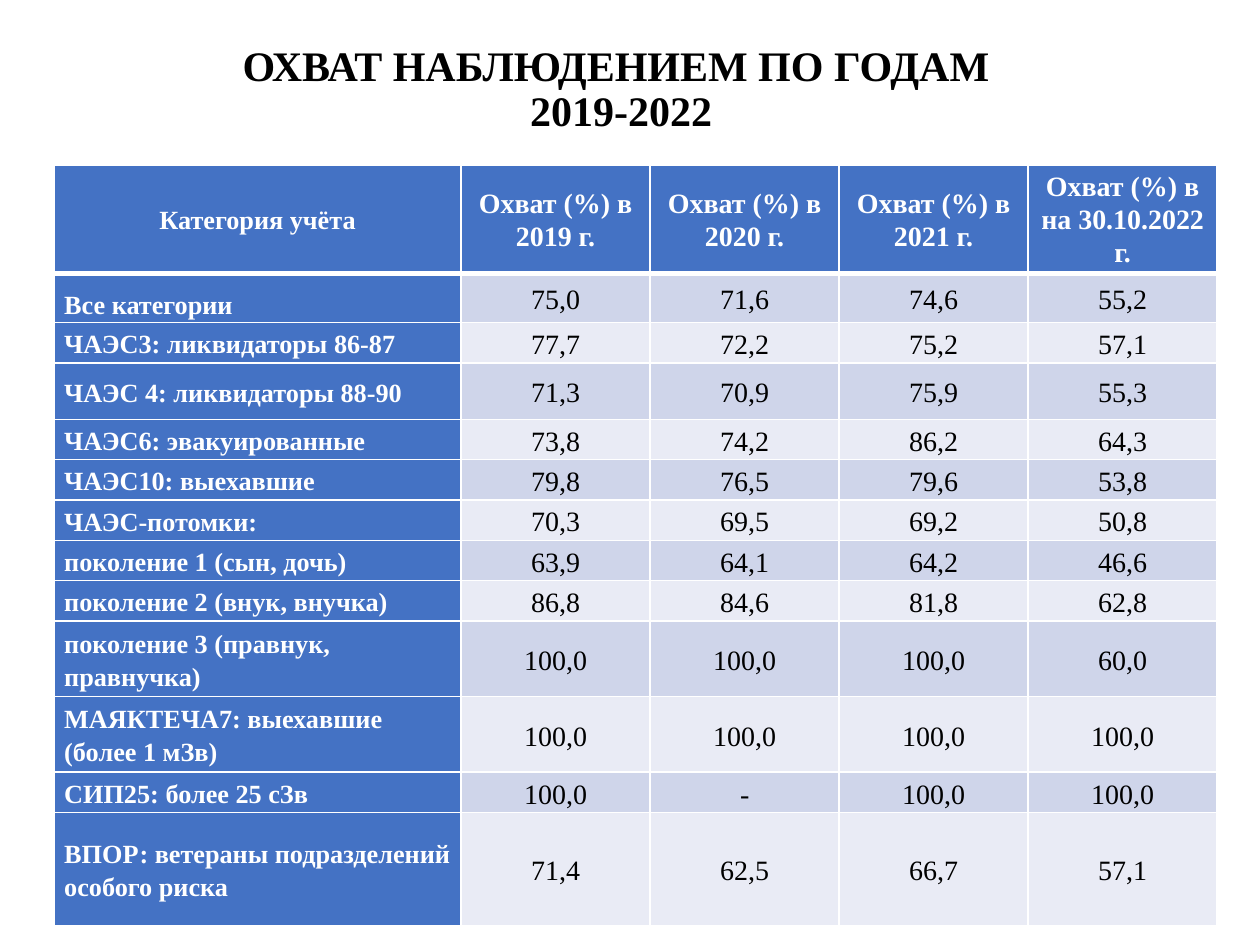
"""Build a slide with a table of observation coverage by year."""
from pptx import Presentation
from pptx import util as u
from pptx.dml.color import RGBColor
from pptx.enum import text
from pptx.oxml import parse_xml
from pptx.oxml.ns import nsdecls

FONT = "Times New Roman"
BLACK = RGBColor(0x00, 0x00, 0x00)
WHITE = RGBColor(0xFF, 0xFF, 0xFF)
BLUE = RGBColor(0x44, 0x72, 0xC4)
BANDS = (RGBColor(0xCF, 0xD5, 0xEA), RGBColor(0xE9, 0xEB, 0xF5))
CENTER = text.PP_ALIGN.CENTER
LEFT = text.PP_ALIGN.LEFT

COLUMN_WIDTHS = (3.23, 1.5, 1.5, 1.5, 1.5)
HEADER_HEIGHT = 0.86
HEADERS = (
    "Категория учёта",
    "Охват (%) в 2019 г.",
    "Охват (%) в 2020 г.",
    "Охват (%) в 2021 г.",
    "Охват (%) в на 30.10.2022 г.",
)
CATEGORIES = (
    (0.39, "Все категории", "75,0", "71,6", "74,6", "55,2"),
    (0.32, "ЧАЭС3: ликвидаторы 86-87", "77,7", "72,2", "75,2", "57,1"),
    (0.45, "ЧАЭС 4: ликвидаторы 88-90", "71,3", "70,9", "75,9", "55,3"),
    (0.32, "ЧАЭС6: эвакуированные", "73,8", "74,2", "86,2", "64,3"),
    (0.32, "ЧАЭС10: выехавшие", "79,8", "76,5", "79,6", "53,8"),
    (0.32, "ЧАЭС-потомки:", "70,3", "69,5", "69,2", "50,8"),
    (0.32, "поколение 1 (сын, дочь)", "63,9", "64,1", "64,2", "46,6"),
    (0.32, "поколение 2 (внук, внучка)", "86,8", "84,6", "81,8", "62,8"),
    (0.6, "поколение 3 (правнук, правнучка)", "100,0", "100,0", "100,0", "60,0"),
    (0.6, "МАЯКТЕЧА7: выехавшие (более 1 мЗв)", "100,0", "100,0", "100,0", "100,0"),
    (0.32, "СИП25: более 25 сЗв", "100,0", "-", "100,0", "100,0"),
    (0.9, "ВПОР: ветераны подразделений особого риска", "71,4", "62,5", "66,7", "57,1"),
)


def add_run(paragraph, wording, size, color, bold):
    """Add one formatted run to a paragraph."""
    run = paragraph.add_run()
    run.text = wording
    run.font.name = FONT
    run.font.size = u.Pt(size)
    run.font.bold = bold
    run.font.color.rgb = color


def add_title(slide, lines):
    """Add the centred two-line title."""
    shape = slide.shapes.add_textbox(
        u.Inches(0.83), u.Inches(0.21), u.Inches(8.2), u.Inches(1.01))
    frame = shape.text_frame
    frame.word_wrap = True
    frame.vertical_anchor = text.MSO_ANCHOR.MIDDLE
    paragraph = frame.paragraphs[0]
    paragraph.alignment = CENTER
    paragraph.line_spacing = 0.9
    for index, line in enumerate(lines):
        if index:
            paragraph.add_line_break()
        add_run(paragraph, line, 24, BLACK, True)


def set_borders(cell, bottom_width=1, top_width=1):
    """Draw white borders round a cell, with widths in points."""
    properties = cell._tc.get_or_add_tcPr()
    widths = {"lnL": 1, "lnR": 1, "lnT": top_width, "lnB": bottom_width}
    for position, (side, width) in enumerate(widths.items()):
        properties.insert(position, parse_xml(
            f'<a:{side} {nsdecls("a")} w="{u.Pt(width)}"><a:solidFill>'
            f'<a:srgbClr val="{WHITE}"/></a:solidFill></a:{side}>'))


def fill_cell(cell, wording, size, color, bold, fill, alignment, spacing):
    """Write and format one table cell."""
    cell.fill.solid()
    cell.fill.fore_color.rgb = fill
    cell.vertical_anchor = text.MSO_ANCHOR.MIDDLE
    cell.margin_left = u.Inches(0.08 if alignment == LEFT else 0.07)
    cell.margin_right = u.Inches(0.07)
    cell.margin_top = cell.margin_bottom = 0
    paragraph = cell.text_frame.paragraphs[0]
    paragraph.alignment = alignment
    paragraph.line_spacing = spacing
    add_run(paragraph, wording, size, color, bold)


def add_coverage_table(slide):
    """Add the table of coverage by category and year."""
    heights = [HEADER_HEIGHT] + [height for height, *_ in CATEGORIES]
    table = slide.shapes.add_table(
        len(heights), len(COLUMN_WIDTHS), u.Inches(0.43), u.Inches(1.31),
        u.Inches(sum(COLUMN_WIDTHS)), u.Inches(sum(heights))).table
    for column, width in zip(table.columns, COLUMN_WIDTHS):
        column.width = u.Inches(width)
    for row, height in zip(table.rows, heights):
        row.height = u.Inches(height)

    for index, header in enumerate(HEADERS):
        cell = table.cell(0, index)
        fill_cell(cell, header, 16 if index else 15, WHITE, True, BLUE, CENTER, 1.07)
        set_borders(cell, bottom_width=3)

    for row_index, (_, category, *values) in enumerate(CATEGORIES, start=1):
        first = row_index == 1
        fill_cell(table.cell(row_index, 0), category, 15, WHITE, True, BLUE,
                  LEFT, 1.5 if first else 1.15)
        band = BANDS[(row_index - 1) % 2]
        for column_index, value in enumerate(values, start=1):
            fill_cell(table.cell(row_index, column_index), value, 16, BLACK,
                      False, band, CENTER, 1.15)
        for cell in table.rows[row_index].cells:
            set_borders(cell, top_width=3 if first else 1)


def main():
    """Create the presentation and save it."""
    presentation = Presentation()
    presentation.slide_width = u.Inches(10)
    presentation.slide_height = u.Inches(7.5)
    slide = presentation.slides.add_slide(presentation.slide_layouts[6])
    add_title(slide, ("ОХВАТ НАБЛЮДЕНИЕМ ПО ГОДАМ ", "2019-2022"))
    add_coverage_table(slide)
    presentation.save("out.pptx")


if __name__ == "__main__":
    main()
